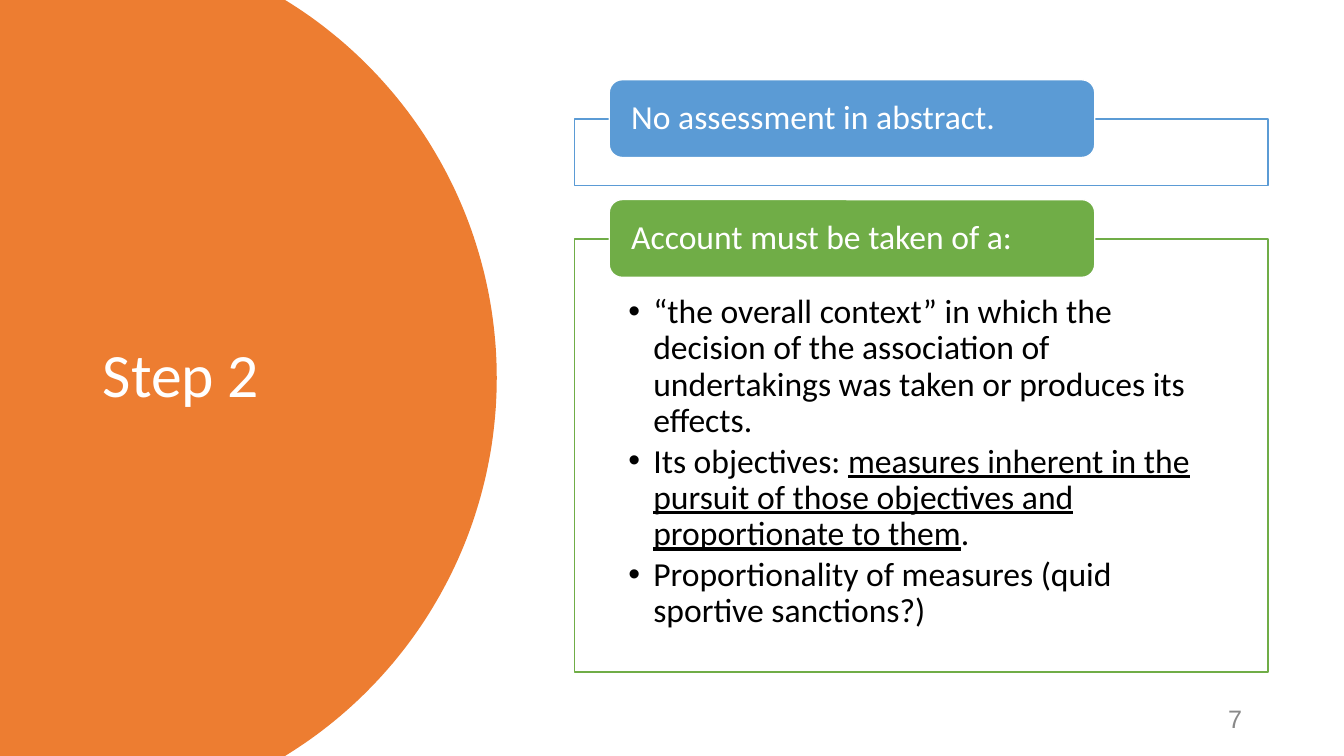
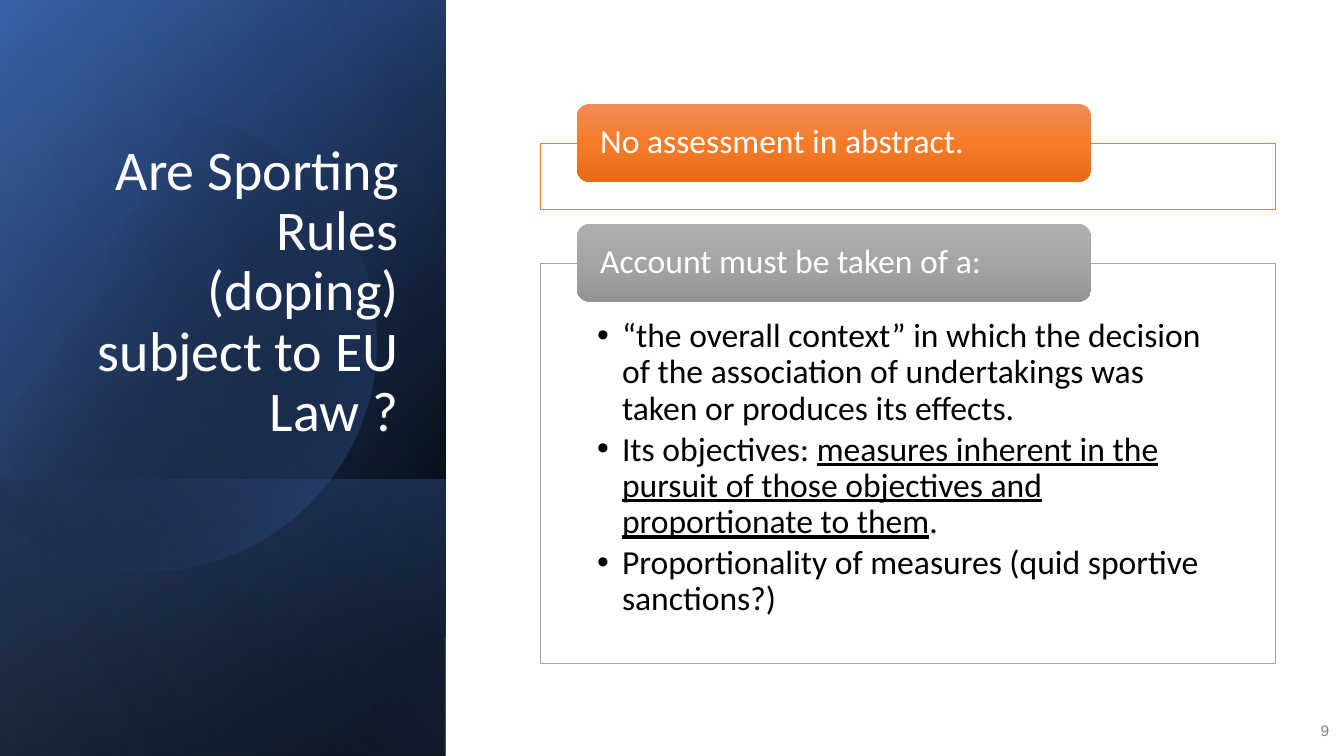
"""Build two slides on assessing sporting rules under EU law."""
from math import acos, asin, cos, sin

from lxml.etree import SubElement
from pptx import Presentation
from pptx.dml.color import RGBColor
from pptx.enum.shapes import MSO_SHAPE as SHAPE
from pptx.enum.text import MSO_ANCHOR as ANCHOR, PP_ALIGN as ALIGN
from pptx.oxml.ns import qn
from pptx.util import Cm, Pt

WHITE = RGBColor(0xFF, 0xFF, 0xFF)
BLACK = RGBColor(0x00, 0x00, 0x00)
ORANGE = RGBColor(0xED, 0x7D, 0x31)
SKY = RGBColor(0x5B, 0x9B, 0xD5)
GREEN = RGBColor(0x70, 0xAD, 0x47)
GRAY = RGBColor(0xA5, 0xA5, 0xA5)
BLUE = RGBColor(0x44, 0x72, 0xC4)
NAVY = RGBColor(0x2F, 0x55, 0x97)
PALE_BLUE = RGBColor(0x8F, 0xAA, 0xDC)
NUMBER_GRAY = RGBColor(0x89, 0x89, 0x89)
SMALL_NUMBER_GRAY = RGBColor(0x80, 0x80, 0x80)
ORANGE_LIGHT = RGBColor(0xF1, 0x8C, 0x57)
ORANGE_VIVID = RGBColor(0xF6, 0x7B, 0x28)
ORANGE_DEEP = RGBColor(0xE5, 0x6C, 0x19)
GRAY_LIGHT = RGBColor(0xAF, 0xAF, 0xAF)
GRAY_DEEP = RGBColor(0x93, 0x93, 0x93)

WIDTH, HEIGHT = 33.87, 19.05
PANEL_WIDTH = 11.23
TAB_HEIGHT, TAB_RISE, CARD_GAP = 1.96, 0.99, 0.35

NO_ABSTRACT = "No assessment in abstract."
ACCOUNT = "Account must be taken of a:"
FACTORS = [
    [("“the overall context” in which the decision of the association of "
      "undertakings was taken or produces its effects.", False)],
    [("Its objectives: ", False),
     ("measures inherent in the pursuit of those objectives and "
      "proportionate to them", True),
     (".", False)],
    [("Proportionality of measures (quid sportive sanctions?)", False)],
]


class Deck:
    def __init__(self):
        self.prs = Presentation()
        self.prs.slide_width, self.prs.slide_height = Cm(WIDTH), Cm(HEIGHT)
        self.s = None

    def new_slide(self):
        self.s = self.prs.slides.add_slide(self.prs.slide_layouts[6])

    def paint(self, sp, fill, line=None, weight=1):
        sp.shadow.inherit = False
        if isinstance(fill, RGBColor):
            sp.fill.solid()
            sp.fill.fore_color.rgb = fill
        else:
            angle, stops = fill
            sp.fill.gradient()
            sp.fill.gradient_angle = 360 - angle
            gs_list = sp._element.spPr.find(qn("a:gradFill")).find(qn("a:gsLst"))
            gs_list.clear()
            for pos, color, alpha in stops:
                gs = SubElement(gs_list, qn("a:gs"), pos=str(pos * 1000))
                clr = SubElement(gs, qn("a:srgbClr"), val=str(color))
                SubElement(clr, qn("a:alpha"), val=str(alpha * 1000))
        if line is None:
            sp.line.fill.background()
        else:
            sp.line.color.rgb = line
            sp.line.width = Pt(weight)

    def set_text(self, sp, paragraphs, size, color, font="Calibri", align=ALIGN.LEFT,
                 anchor=ANCHOR.MIDDLE, margins=(0.25, 0.13, 0.25, 0.13), bullet=False):
        tf = sp.text_frame
        tf.word_wrap = True
        tf.vertical_anchor = anchor
        (tf.margin_left, tf.margin_top,
         tf.margin_right, tf.margin_bottom) = map(Cm, margins)
        for i, runs in enumerate(paragraphs):
            p = tf.add_paragraph() if i else tf.paragraphs[0]
            p.alignment = align
            p.line_spacing = 0.9
            if bullet:
                p.space_after = Pt(3.3)
                pPr = p._p.get_or_add_pPr()
                pPr.set("marL", str(Cm(0.63)))
                pPr.set("indent", str(-Cm(0.63)))
                SubElement(pPr, qn("a:buFont"), typeface="Arial")
                SubElement(pPr, qn("a:buChar"), char="•")
            for text, underline in runs:
                r = p.add_run()
                r.text = text
                r.font.name, r.font.size = font, Pt(size)
                r.font.color.rgb = color
                if underline:
                    r.font.underline = True

    def text(self, box, text, size, color, **style):
        sp = self.s.shapes.add_textbox(*map(Cm, box))
        self.set_text(sp, [[(text, False)]], size, color, **style)

    def title(self, box, text, size, **style):
        self.text(box, text, size, WHITE, **style)

    def number(self, box, text, size, color):
        self.text(box, text, size, color, font="Arial", align=ALIGN.RIGHT)

    def disc(self, cx, cy, radius, fill):
        if radius > cy:
            half = asin(cy / radius)
        else:
            half = acos(-cx / radius)
        steps = 120
        turns = [half * (2 * i / steps - 1) for i in range(steps + 1)]
        arc = [(Cm(cx + radius * cos(t)), Cm(cy + radius * sin(t))) for t in turns]
        outline = [(0, arc[0][1])] + arc + [(0, arc[-1][1])]
        builder = self.s.shapes.build_freeform(*outline[0])
        builder.add_line_segments(outline[1:], close=True)
        self.paint(builder.convert_to_shape(), fill)

    def panel(self, top, fill):
        w, h = HEIGHT - top, PANEL_WIDTH
        x, y = (PANEL_WIDTH - w) / 2, top + (w - h) / 2
        sp = self.s.shapes.add_shape(SHAPE.RECTANGLE, Cm(x), Cm(y), Cm(w), Cm(h))
        sp.rotation = 90
        sp._element.spPr.find(qn("a:xfrm")).set("flipH", "1")
        self.paint(sp, fill)

    def card(self, x, y, w, h, label, points, tab_fill, line, weight, tab_line):
        body_top = y + TAB_RISE
        body = self.s.shapes.add_shape(
            SHAPE.RECTANGLE, Cm(x), Cm(body_top), Cm(w), Cm(h))
        self.paint(body, WHITE, line, weight)
        if points:
            side = 0.0776 * w
            self.set_text(body, points, 24, BLACK, anchor=ANCHOR.TOP, bullet=True,
                          margins=(side, 1.4, side, 0.48))
        tab = self.s.shapes.add_shape(
            SHAPE.ROUNDED_RECTANGLE, Cm(x + 0.05 * w), Cm(y),
            Cm(0.7 * w), Cm(TAB_HEIGHT))
        self.paint(tab, tab_fill, tab_line)
        side = 0.032 * w - 0.1
        self.set_text(tab, [[(label, False)]], 24, WHITE, margins=(side, 0, side, 0))
        return body_top + h + CARD_GAP

    def cards(self, x, y, w, factors_height, looks, weight, tab_line=None):
        rows = [(1.68, NO_ABSTRACT, []), (factors_height, ACCOUNT, FACTORS)]
        for (h, label, points), (tab_fill, line) in zip(rows, looks):
            y = self.card(x, y, w, h, label, points, tab_fill, line, weight, tab_line)


def step_slide(deck):
    deck.new_slide()
    deck.disc(1.35, HEIGHT / 2, 11.17, ORANGE)
    deck.title((2.34, 1.78, 8.2, 15.47), "Step 2", 44)
    deck.number((23.93, 17.65, 7.62, 1.02), "7", 18, NUMBER_GRAY)
    deck.cards(14.48, 2.01, 17.48, 10.92, [(SKY, SKY), (GREEN, GREEN)], 1, WHITE)


def question_slide(deck):
    deck.new_slide()
    deck.panel(0, (50, [(8, BLACK, 100), (100, NAVY, 100)]))
    deck.panel(0, (30, [(0, BLACK, 0), (99, BLUE, 46)]))
    deck.panel(12.09, (130, [(2, BLUE, 29), (100, BLACK, 30)]))
    deck.disc(3.66, 8.59, 5.82, (30, [(29, BLACK, 0), (100, BLUE, 43)]))
    deck.panel(0, (120, [(0, BLACK, 0), (99, PALE_BLUE, 11)]))
    deck.title((1.63, 4.67, 8.66, 6.65),
               "Are Sporting Rules (doping) subject to EU Law ?", 40,
               align=ALIGN.RIGHT, anchor=ANCHOR.BOTTOM)
    deck.number((32.51, 17.93, 1.24, 1.02), "9", 11, SMALL_NUMBER_GRAY)
    orange_tab = (90, [(0, ORANGE_LIGHT, 100), (50, ORANGE_VIVID, 100),
                       (100, ORANGE_DEEP, 100)])
    gray_tab = (90, [(0, GRAY_LIGHT, 100), (50, GRAY, 100), (100, GRAY_DEEP, 100)])
    deck.cards(13.61, 2.62, 18.52, 10.08,
               [(orange_tab, ORANGE), (gray_tab, GRAY)], 0.5)


def main():
    deck = Deck()
    step_slide(deck)
    question_slide(deck)
    deck.prs.save("out.pptx")


if __name__ == "__main__":
    main()
